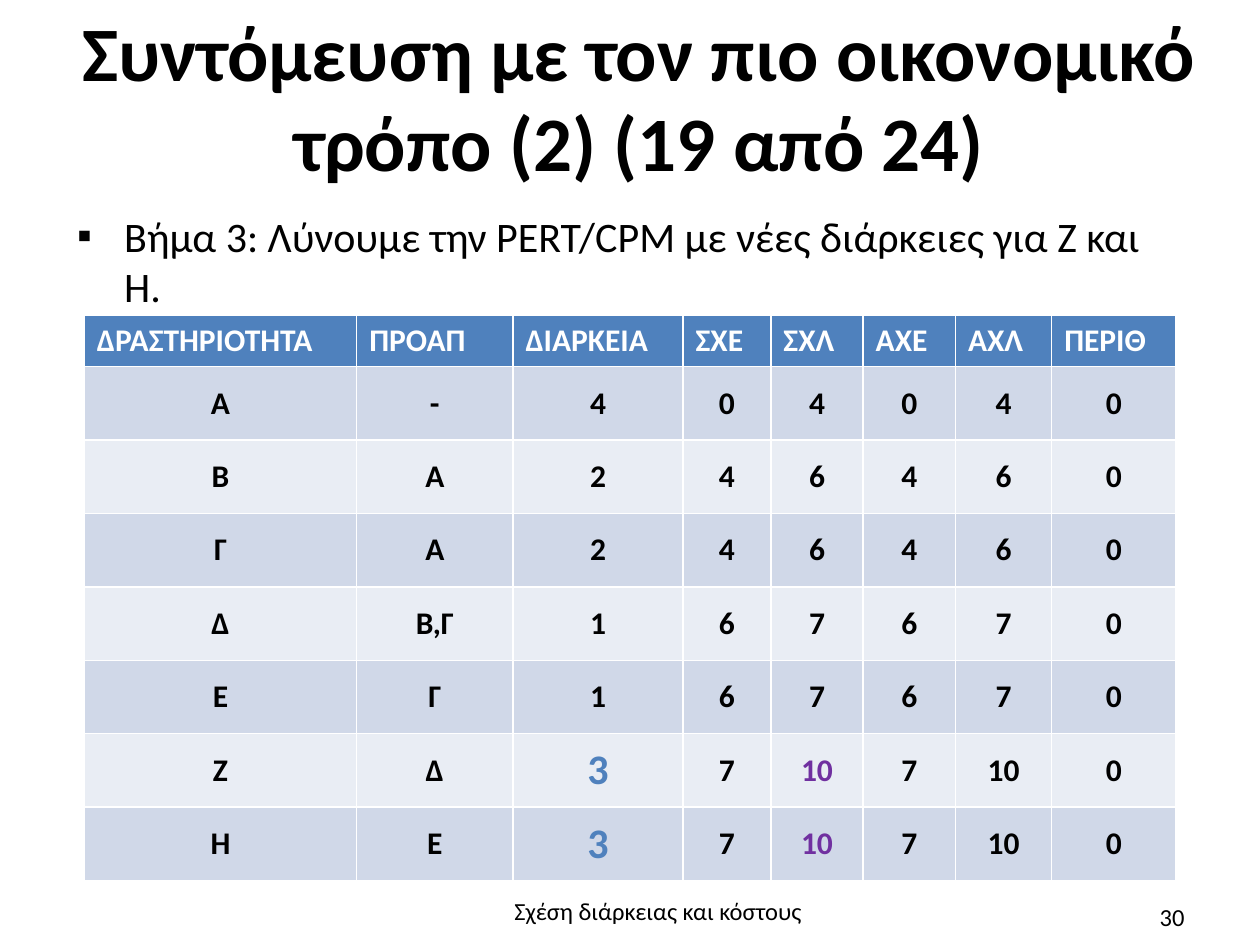
"""Build the slide with the PERT/CPM table for the most economical shortening."""
from dataclasses import dataclass

from lxml.etree import SubElement
from pptx import Presentation
from pptx.dml.color import RGBColor
from pptx.enum.text import MSO_ANCHOR, MSO_AUTO_SIZE, PP_ALIGN
from pptx.oxml.ns import qn
from pptx.util import Cm, Pt


@dataclass(frozen=True)
class Theme:
    font: str = "Calibri"
    title_size: int = 44
    body_size: int = 24
    cell_size: int = 18
    footer_size: int = 14
    ink: str = "000000"
    header_ink: str = "FFFFFF"
    accent: str = "4F81BD"
    finish: str = "7030A0"
    bands: tuple = ("D0D8E8", "E9EDF4")


THEME = Theme()

TITLE = "Συντόμευση με τον πιο οικονομικό τρόπο (2) (19 από 24)"
STEP = "Βήμα 3: Λύνουμε την PERT/CPM με νέες διάρκειες για Ζ και Η."
FOOTER = "Σχέση διάρκειας και κόστους"
PAGE = "30"
HEADINGS = ("ΔΡΑΣΤΗΡΙΟΤΗΤΑ", "ΠΡΟΑΠ", "ΔΙΑΡΚΕΙΑ", "ΣΧΕ", "ΣΧΛ", "ΑΧΕ", "ΑΧΛ", "ΠΕΡΙΘ")
ACTIVITIES = [
    ("Α", "-", 4, 0, 4, 0, 4, 0),
    ("Β", "Α", 2, 4, 6, 4, 6, 0),
    ("Γ", "Α", 2, 4, 6, 4, 6, 0),
    ("Δ", "Β,Γ", 1, 6, 7, 6, 7, 0),
    ("Ε", "Γ", 1, 6, 7, 6, 7, 0),
    ("Ζ", "Δ", 3, 7, 10, 7, 10, 0),
    ("Η", "Ε", 3, 7, 10, 7, 10, 0),
]
SHORTENED = ("Ζ", "Η")
HIGHLIGHTS = {
    "ΔΙΑΡΚΕΙΑ": (THEME.body_size, THEME.accent),
    "ΣΧΛ": (THEME.cell_size, THEME.finish),
}
COLUMN_WIDTHS = (5.49, 3.15, 3.43, 1.77, 1.86, 1.86, 1.94, 2.51)
HEADER_HEIGHT = 1
ROW_HEIGHT = 1.48


def place(shape, left, top, width, height):
    shape.left, shape.top = Cm(left), Cm(top)
    shape.width, shape.height = Cm(width), Cm(height)


def write(frame, text, size, color=THEME.ink, bold=False, align=None):
    frame.text = text
    paragraph = frame.paragraphs[0]
    paragraph.alignment = align
    font = paragraph.runs[0].font
    font.name, font.size, font.bold = THEME.font, Pt(size), bold
    font.color.rgb = RGBColor.from_string(color)
    return paragraph


def add_title(slide):
    title = slide.shapes.title
    place(title, 1.3, 0.23, 23.19, 3.5)
    frame = title.text_frame
    heading = write(frame, TITLE, THEME.title_size, bold=True, align=PP_ALIGN.CENTER)
    heading.line_spacing = 0.98
    frame.auto_size = MSO_AUTO_SIZE.NONE
    frame.vertical_anchor = MSO_ANCHOR.MIDDLE
    frame.margin_left = frame.margin_right = frame.margin_bottom = 0
    frame.margin_top = Cm(0.05)


def add_step(slide):
    body = slide.placeholders[1]
    place(body, 1.3, 4.11, 22.83, 2.31)
    step = write(body.text_frame, STEP, THEME.body_size, align=PP_ALIGN.LEFT)
    body.text_frame.auto_size = MSO_AUTO_SIZE.NONE
    step.space_before = Pt(0)
    properties = step._p.get_or_add_pPr()
    properties.set("marL", str(Cm(0.95)))
    properties.set("indent", str(-Cm(0.95)))
    SubElement(properties, qn("a:buFont"), typeface="Arial")
    SubElement(properties, qn("a:buChar"), char="▪")


def add_schedule(slide):
    row_heights = [HEADER_HEIGHT] + [ROW_HEIGHT] * len(ACTIVITIES)
    schedule = slide.shapes.add_table(
        len(row_heights), len(HEADINGS), Cm(1.7), Cm(6.36),
        Cm(sum(COLUMN_WIDTHS)), Cm(sum(row_heights)),
    ).table
    for column, width in zip(schedule.columns, COLUMN_WIDTHS):
        column.width = Cm(width)
    for row, height in zip(schedule.rows, row_heights):
        row.height = Cm(height)

    def fill_cell(row, column, text, size, color, fill, align):
        cell = schedule.cell(row, column)
        write(cell.text_frame, str(text), size, color, True, align)
        cell.fill.solid()
        cell.fill.fore_color.rgb = RGBColor.from_string(fill)
        return cell

    for column, heading in enumerate(HEADINGS):
        fill_cell(0, column, heading, THEME.cell_size, THEME.header_ink,
                  THEME.accent, PP_ALIGN.LEFT)
    for row, activity in enumerate(ACTIVITIES, 1):
        band = THEME.bands[(row - 1) % 2]
        highlights = HIGHLIGHTS if activity[0] in SHORTENED else {}
        for column, (heading, value) in enumerate(zip(HEADINGS, activity)):
            size, color = highlights.get(heading, (THEME.cell_size, THEME.ink))
            cell = fill_cell(row, column, value, size, color, band, PP_ALIGN.CENTER)
            cell.vertical_anchor = MSO_ANCHOR.MIDDLE


def add_footer(slide, text, bounds, align):
    footer = slide.shapes.add_textbox(*map(Cm, bounds))
    footer.text_frame.word_wrap = True
    write(footer.text_frame, text, THEME.footer_size, align=align)


def main():
    presentation = Presentation()
    presentation.slide_width, presentation.slide_height = Cm(25.4), Cm(19.05)
    slide = presentation.slides.add_slide(presentation.slide_layouts[1])
    add_title(slide)
    add_step(slide)
    add_schedule(slide)
    add_footer(slide, FOOTER, (8.84, 17.93, 8.86, 1.4), PP_ALIGN.CENTER)
    add_footer(slide, PAGE, (18.21, 18.06, 5.92, 1.02), PP_ALIGN.RIGHT)
    presentation.save("out.pptx")


if __name__ == "__main__":
    main()
